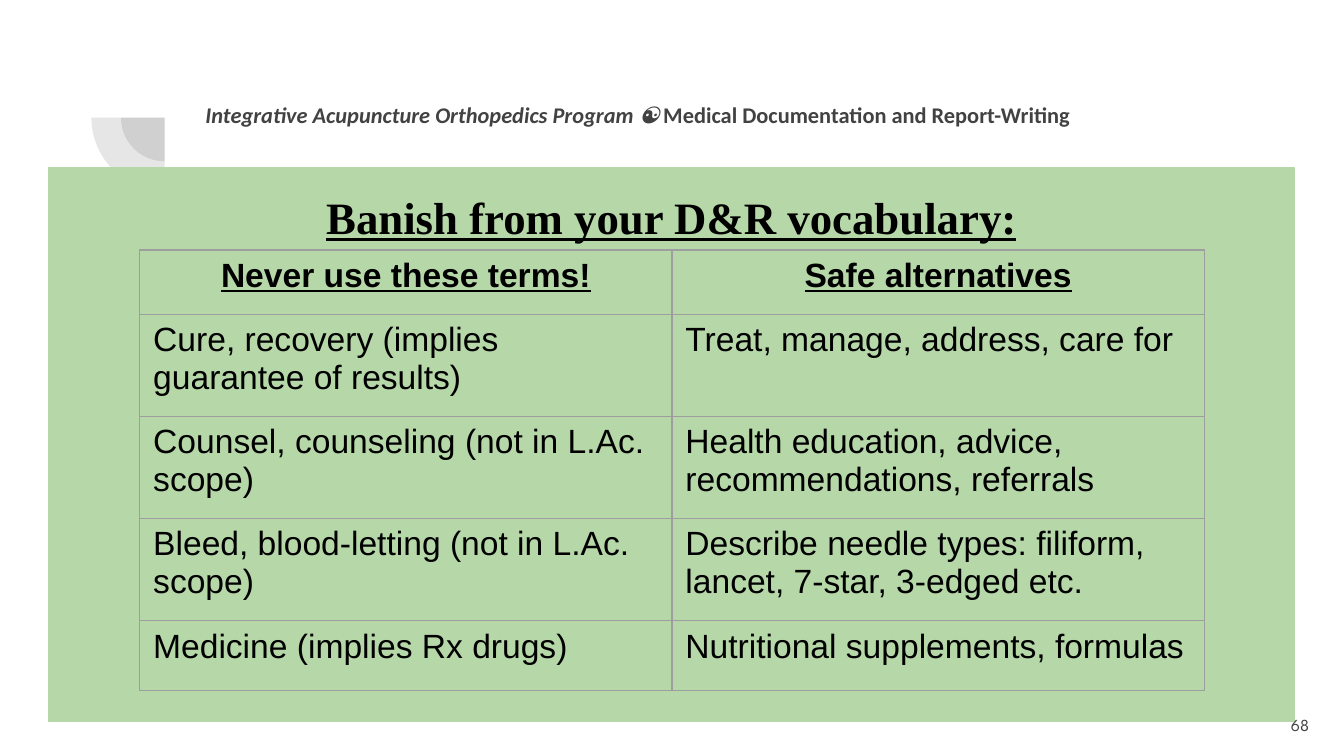
from lxml.etree import SubElement
from pptx import Presentation
from pptx.dml.color import RGBColor as RGB
from pptx.enum.shapes import MSO_SHAPE as SHAPE
from pptx.enum.text import MSO_ANCHOR as ANCHOR, MSO_AUTO_SIZE as AUTO, PP_ALIGN as ALIGN
from pptx.oxml.ns import qn
from pptx.util import Inches, Pt

THEME = {
    "ink": RGB.from_string("000000"),
    "grey": RGB.from_string("424242"),
    "green": RGB.from_string("B6D7A8"),
    "rule": "9E9E9E",
    "heading": Pt(24), "table": Pt(18), "header": Pt(12), "number": Pt(9),
}

deck = Presentation()
deck.slide_width, deck.slide_height = Inches(10), Inches(5.625)
W, H = deck.slide_width, deck.slide_height
slide = deck.slides.add_slide(deck.slide_layouts[5])
shapes = slide.shapes


def area(left, top, width, height):
    """Turn percentages of the slide into lengths."""
    return [int(share * side / 100) for share, side in
            zip((left, top, width, height), (W, H, W, H))]


def style(font, name, size, color, bold=False, underline=False):
    font.name, font.size, font.bold, font.underline = name, size, bold, underline
    font.color.rgb = color


# Quarter circles around one centre
center_x, center_y = int(W * 0.1225), int(H * 0.1556)
for diameter_share in (0.065, 0.109):
    diameter = int(W * diameter_share)
    quarter = shapes.add_shape(SHAPE.PIE, center_x - diameter // 2,
                               center_y - diameter // 2, diameter, diameter)
    quarter.rotation = 270
    quarter.adjustments[0], quarter.adjustments[1] = 107.93, 162
    quarter.shadow.inherit = False
    quarter.line.fill.background()
    quarter.fill.solid()
    quarter.fill.fore_color.rgb = THEME["grey"]
    color = quarter.fill._xPr.find(qn("a:solidFill"))[0]
    SubElement(color, qn("a:alpha"), val="13000")

# Program header
header = shapes.add_textbox(*area(14.3, 11.56, 76.9, 7.64)).text_frame
program_line = header.paragraphs[0]
style(program_line.font, "Calibri", THEME["header"], THEME["grey"], bold=True)
for text, italic in (("Integrative Acupuncture Orthopedics Program ☯ ", True),
                     ("Medical Documentation and Report-Writing", False)):
    run = program_line.add_run()
    run.text, run.font.italic = text, italic

# Green panel with the heading, moved in front of the quarter circles
panel = shapes.title
panel.left, panel.top, panel.width, panel.height = area(3.6, 22.22, 92.7, 73.24)
shapes._spTree.append(panel._element)
panel.fill.solid()
panel.fill.fore_color.rgb = panel.line.color.rgb = THEME["green"]
panel.line.width = Pt(0.75)
panel.text_frame.text = "Banish from your D&R vocabulary:"
panel.text_frame.vertical_anchor = ANCHOR.TOP
heading = panel.text_frame.paragraphs[0]
heading.alignment, heading.line_spacing = ALIGN.CENTER, 1.15
style(heading.font, "Times New Roman", THEME["heading"], THEME["ink"], True, True)

# Slide number
number = shapes.add_textbox(*area(92.4, 92.09, 6, 7.64)).text_frame
number.text = "68"
number.vertical_anchor = ANCHOR.MIDDLE
number.paragraphs[0].alignment = ALIGN.RIGHT
style(number.paragraphs[0].font, "League Spartan", THEME["number"], THEME["grey"])

for frame in (header, panel.text_frame, number):
    frame.word_wrap, frame.auto_size = True, AUTO.NONE
    frame.margin_left = frame.margin_right = Inches(0.1)
    frame.margin_top = frame.margin_bottom = Inches(0.1)

# Vocabulary table
vocabulary = [
    ("Never use these terms!", "Safe alternatives"),
    ("Cure, recovery (implies guarantee of results)", "Treat, manage, address, care for"),
    ("Counsel, counseling (not in L.Ac. scope)",
     "Health education, advice, recommendations, referrals"),
    ("Bleed, blood-letting (not in L.Ac. scope)",
     "Describe needle types: filiform, lancet, 7-star, 3-edged etc."),
    ("Medicine (implies Rx drugs)", "Nutritional supplements, formulas"),
]
row_shares = (8.53, 13.51, 13.51, 13.51, 9.24)
table = shapes.add_table(len(vocabulary), 2,
                         *area(10.4, 33.07, 79.2, sum(row_shares))).table
table.first_row = table.horz_banding = False
for r, (terms, share) in enumerate(zip(vocabulary, row_shares)):
    table.rows[r].height = int(H * share / 100)
    is_head = r == 0
    for c, term in enumerate(terms):
        cell = table.cell(r, c)
        cell.text = term
        entry = cell.text_frame.paragraphs[0]
        entry.alignment = ALIGN.CENTER if is_head else ALIGN.LEFT
        style(entry.font, "Arial", THEME["table"], THEME["ink"], is_head, is_head)
        cell.margin_left = cell.margin_right = Inches(0.1)
        cell.margin_top = cell.margin_bottom = Inches(0.05)
        # Borders come before the fill in the cell properties
        for side in ("lnL", "lnR", "lnT", "lnB"):
            border = SubElement(cell._tc.get_or_add_tcPr(), qn(f"a:{side}"),
                                w=str(Pt(0.75)))
            SubElement(SubElement(border, qn("a:solidFill")), qn("a:srgbClr"),
                       val=THEME["rule"])
        cell.fill.background()

deck.save("out.pptx")
